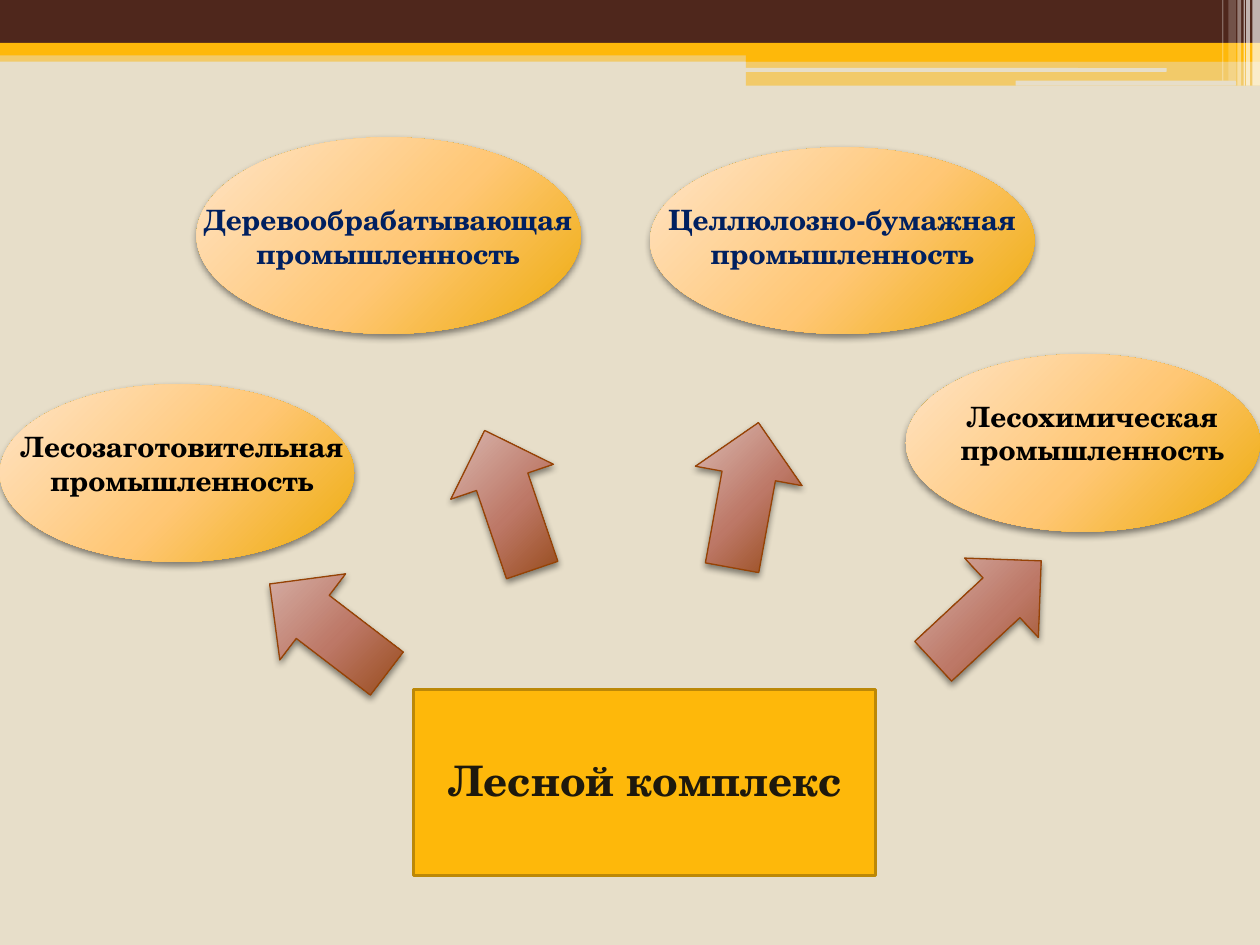
from dataclasses import dataclass

from lxml import etree
from pptx import Presentation, util as u
from pptx.dml.color import RGBColor
from pptx.enum import shapes, text
from pptx.oxml import parse_xml
from pptx.oxml.ns import nsdecls, qn

KIND = shapes.MSO_SHAPE


@dataclass(frozen=True)
class Theme:
    sand: str = "E7DEC9"
    brown: str = "4F271C"
    gold: str = "FEB80A"
    edge: str = "BC8807"
    rust: str = "964305"
    white: str = "FFFFFF"
    black: str = "000000"
    navy: str = "002060"
    dark: str = "1E190D"
    peach: tuple = ("FFE4C7", "FFC775", "EDAB09")
    clay: tuple = ("E0C7C2", "BD7867", "8C3E05")
    font: str = "TeX Gyre Schola"
    head: int = 24
    body: int = 16


T = Theme()


def put(obj, **vals):
    for key, val in vals.items():
        setattr(obj, key, val)


def shape(slide, kind, box, fill=None, alpha=100, line=None, width=1):
    """Add a preset shape with a plain fill and an optional outline."""
    item = slide.shapes.add_shape(kind, *map(u.Inches, box))
    item.shadow.inherit = False
    if fill:
        item.fill.solid()
        item.fill.fore_color.rgb = RGBColor.from_string(fill)
        if alpha < 100:
            color = item._element.spPr.find(f".//{qn('a:srgbClr')}")
            etree.SubElement(color, qn("a:alpha"), val=str(alpha * 1000))
    else:
        item.fill.background()
    if line:
        item.line.color.rgb = RGBColor.from_string(line)
        item.line.width = u.Pt(width)
    else:
        item.line.fill.background()
    return item


def glow(slide, kind, box, tones, line=None, turn=0):
    """Add a shape with a radial gradient and a soft shadow below."""
    item = shape(slide, kind, box, line=line, width=0.75)
    item.rotation = turn
    stops = "".join(
        f'<a:gs pos="{pos * 1000}"><a:srgbClr val="{tone}"/></a:gs>'
        for pos, tone in zip((0, 55, 100), tones))
    grad = parse_xml(
        f'<a:gradFill {nsdecls("a")} rotWithShape="1"><a:gsLst>{stops}</a:gsLst>'
        '<a:path path="circle"><a:fillToRect l="-40000" t="-90000" '
        'r="140000" b="190000"/></a:path></a:gradFill>')
    props = item._element.spPr
    props.replace(props.find(qn("a:noFill")), grad)
    props.find(qn("a:effectLst")).append(parse_xml(
        f'<a:outerShdw {nsdecls("a")} blurRad="{u.Pt(4)}" dist="{u.Pt(2)}" '
        'dir="5400000" algn="ctr" rotWithShape="0"><a:srgbClr val="000000">'
        '<a:alpha val="45000"/></a:srgbClr></a:outerShdw>'))


def label(slide, box, words, color, size):
    """Add a centred bold caption."""
    frame = slide.shapes.add_textbox(*map(u.Inches, box)).text_frame
    put(frame, word_wrap=True, auto_size=text.MSO_AUTO_SIZE.SHAPE_TO_FIT_TEXT)
    para = frame.paragraphs[0]
    para.alignment = text.PP_ALIGN.CENTER
    run = para.add_run()
    run.text = words
    put(run.font, name=T.font, size=u.Pt(size), bold=True)
    run.font.color.rgb = RGBColor.from_string(color)


def banner(slide):
    """Draw the bands, notches and light stripes along the top."""
    for box, fill, alpha in (
            ((0, 0.4, 10, 0.09), T.gold, 50),
            ((0, 0, 10, 0.34), T.brown, 100),
            ((0, 0.34, 10, 0.1), T.gold, 100),
            ((5.92, 0.39, 4.08, 0.1), T.gold, 100),
            ((5.92, 0.48, 4.08, 0.2), T.gold, 50)):
        shape(slide, KIND.RECTANGLE, box, fill, alpha)
    for box in ((5.91, 0.54, 3.35, 0.03), (8.06, 0.64, 1.75, 0.04)):
        shape(slide, KIND.ROUNDED_RECTANGLE, box, T.sand)
    for left, wide, high, alpha in (
            (9.94, 0.06, 0.68, 65), (9.89, 0.03, 0.68, 65),
            (9.87, 0.01, 0.68, 60), (9.82, 0.03, 0.68, 40),
            (9.75, 0.06, 0.64, 20), (9.7, 0.01, 0.64, 30)):
        shape(slide, KIND.RECTANGLE, (left, 0, wide, high), T.white, alpha)


def main():
    deck = Presentation()
    put(deck, slide_width=u.Inches(10), slide_height=u.Inches(7.5))
    slide = deck.slides.add_slide(deck.slide_layouts[6])
    back = slide.background.fill
    back.solid()
    back.fore_color.rgb = RGBColor.from_string(T.sand)
    banner(slide)

    # Main block
    shape(slide, KIND.RECTANGLE, (3.28, 5.47, 3.67, 1.48), T.gold,
          line=T.edge, width=1.5)
    label(slide, (3.44, 5.94, 3.36, 0.5), "Лесной комплекс", T.dark, T.head)

    # Arrows to the branches
    for left, top, turn in ((2.02, 4.56, 217.4), (3.45, 3.54, 251.2),
                            (5.33, 3.5, 280.3), (7.25, 4.42, 317.1)):
        glow(slide, KIND.RIGHT_ARROW, (left, top, 1.17, 0.86), T.clay,
             T.rust, turn)

    # Branches: oval, caption box, first word, colour
    parts = (
        ((0, 3.05, 2.81, 1.41), (0, 3.36, 2.89, 0.64),
         "Лесозаготовительная", T.black),
        ((7.19, 2.81, 2.81, 1.41), (7.34, 3.12, 2.66, 0.64),
         "Лесохимическая", T.black),
        ((5.16, 1.17, 3.05, 1.48), (5.16, 1.56, 3.05, 0.64),
         "Целлюлозно-бумажная", T.navy),
        ((1.56, 1.09, 3.05, 1.56), (1.48, 1.56, 3.2, 0.64),
         "Деревообрабатывающая", T.navy))
    for oval, box, word, color in parts:
        glow(slide, KIND.OVAL, oval, T.peach)
        label(slide, box, f"{word} промышленность", color, T.body)

    deck.save("out.pptx")


if __name__ == "__main__":
    main()
